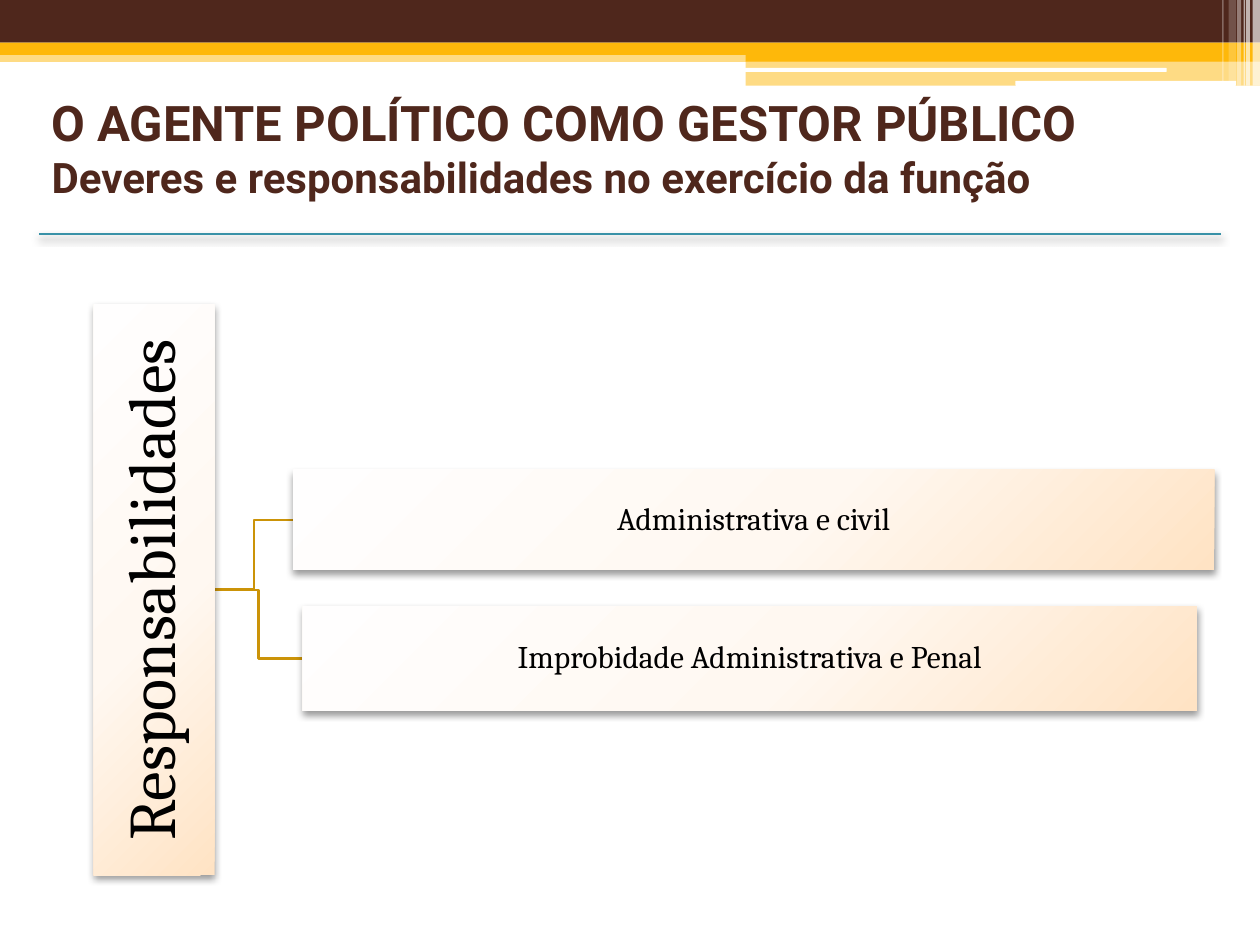
from pptx import Presentation
from pptx.dml.color import RGBColor
from pptx.enum.shapes import MSO_CONNECTOR, MSO_SHAPE
from pptx.enum.text import MSO_ANCHOR, PP_ALIGN
from pptx.oxml import parse_xml
from pptx.oxml.ns import nsdecls, qn
from pptx.util import Cm, Pt

BROWN = RGBColor(0x4F, 0x27, 0x1C)
AMBER = RGBColor(0xFE, 0xB8, 0x0A)
OCHRE = RGBColor(0xCB, 0x93, 0x08)
TEAL = RGBColor(0x38, 0x91, 0xA7)
WHITE = RGBColor(0xFF, 0xFF, 0xFF)
BLACK = RGBColor(0, 0, 0)
CREAM_STOPS = ((0, RGBColor(0xFF, 0xFE, 0xFE)),
               (55, RGBColor(0xFF, 0xF8, 0xF1)),
               (100, RGBColor(0xFF, 0xE3, 0xC4)))

# left, top, width, height in cm, colour, opacity in %
BANDS = (
    (0, 1.02, 25.4, 0.23, AMBER, 50),
    (0, 0, 25.4, 0.86, BROWN, 100),
    (0, 0.86, 25.4, 0.25, AMBER, 100),
    (15.03, 0.99, 10.37, 0.25, AMBER, 100),
    (15.03, 1.23, 10.37, 0.5, AMBER, 50),
)
GAPS = ((15.01, 1.37, 8.51, 0.08), (20.47, 1.63, 4.45, 0.1))
# left, width, height in cm, opacity in %
STRIPES = (
    (25.25, 0.15, 1.73, 65),
    (25.12, 0.08, 1.73, 65),
    (25.07, 0.03, 1.73, 60),
    (24.94, 0.08, 1.73, 40),
    (24.77, 0.15, 1.63, 20),
    (24.64, 0.03, 1.63, 30),
)
SPINE_CENTRE = (3.11, 11.89)
SPINE_LENGTH, SPINE_THICKNESS = 11.51, 2.44
BRANCHES = (
    ("Administrativa e civil", 5.91, 9.47, 18.57, 2.02),
    ("Improbidade Administrativa e Penal", 6.1, 12.22, 18.03, 2.11),
)


class SlidePainter:
    heading_font = "Roboto"
    body_font = "Cambria"

    def __init__(self, slide):
        self.slide = slide

    def block(self, left, top, width, height, color, opacity=100,
              kind=MSO_SHAPE.RECTANGLE):
        block = self.slide.shapes.add_shape(
            kind, Cm(left), Cm(top), Cm(width), Cm(height))
        block.fill.solid()
        block.fill.fore_color.rgb = color
        block.line.fill.background()
        block.shadow.inherit = False
        if opacity < 100:
            srgb = block.fill._xPr.find(".//" + qn("a:srgbClr"))
            srgb.append(parse_xml(
                f'<a:alpha {nsdecls("a")} val="{opacity * 1000}"/>'))
        return block

    def drop_shadow(self, element):
        element._element.spPr.append(parse_xml(
            f'<a:effectLst {nsdecls("a")}><a:outerShdw blurRad="{Pt(4.1)}" '
            f'dist="{Pt(2)}" dir="5400000" rotWithShape="0">'
            '<a:srgbClr val="000000"><a:alpha val="40000"/></a:srgbClr>'
            '</a:outerShdw></a:effectLst>'))

    def card(self, text, left, top, width, height, size, inset):
        """Shaded box with a soft shadow and centred text."""
        card = self.slide.shapes.add_shape(
            MSO_SHAPE.RECTANGLE, Cm(left), Cm(top), Cm(width), Cm(height))
        card.fill.background()
        card.line.fill.background()
        stops = "".join(
            f'<a:gs pos="{position * 1000}"><a:srgbClr val="{color}"/></a:gs>'
            for position, color in CREAM_STOPS)
        properties = card._element.spPr
        properties.replace(properties.find(qn("a:noFill")), parse_xml(
            f'<a:gradFill {nsdecls("a")} rotWithShape="1">'
            f'<a:gsLst>{stops}</a:gsLst><a:path path="circle">'
            '<a:fillToRect l="-40000" t="-90000" r="140000" b="190000"/>'
            '</a:path></a:gradFill>'))
        self.drop_shadow(card)

        frame = card.text_frame
        frame.word_wrap = True
        frame.vertical_anchor = MSO_ANCHOR.MIDDLE
        frame.margin_left = frame.margin_right = Cm(inset)
        frame.margin_top = frame.margin_bottom = Cm(inset)
        frame.text = text
        paragraph = frame.paragraphs[0]
        paragraph.alignment = PP_ALIGN.CENTER
        paragraph.line_spacing = 0.9
        self.style(paragraph.runs[0], size, self.body_font, BLACK)
        return card

    def style(self, run, size, font, color, bold=False):
        run.font.size = Pt(size)
        run.font.name = font
        run.font.color.rgb = color
        run.font.bold = bold

    def elbow(self, start_x, start_y, end_x, end_y):
        middle = (start_x + end_x) / 2
        builder = self.slide.shapes.build_freeform(Cm(start_x), Cm(start_y))
        corners = ((middle, start_y), (middle, end_y), (end_x, end_y))
        builder.add_line_segments(
            [(Cm(x), Cm(y)) for x, y in corners], close=False)
        elbow = builder.convert_to_shape()
        elbow.fill.background()
        elbow.line.color.rgb = OCHRE
        elbow.line.width = Pt(1.5)
        elbow.shadow.inherit = False

    def rule(self, left, right, y):
        rule = self.slide.shapes.add_connector(
            MSO_CONNECTOR.STRAIGHT, Cm(left), Cm(y), Cm(right), Cm(y))
        rule.line.color.rgb = TEAL
        rule.line.width = Pt(1.5)
        self.drop_shadow(rule)

    def heading(self, title, subtitle, left, top, width, height):
        box = self.slide.shapes.add_textbox(
            Cm(left), Cm(top), Cm(width), Cm(height))
        frame = box.text_frame
        frame.word_wrap = True
        frame.vertical_anchor = MSO_ANCHOR.MIDDLE
        paragraph = frame.paragraphs[0]
        paragraph.text = f"{title}\v{subtitle}"
        for run, size in zip(paragraph.runs, (28, 24)):
            self.style(run, size, self.heading_font, BROWN, bold=True)


def main():
    deck = Presentation()
    deck.slide_width, deck.slide_height = Cm(25.4), Cm(19.05)
    painter = SlidePainter(deck.slides.add_slide(deck.slide_layouts[6]))

    for band in BANDS:
        painter.block(*band)
    for gap in GAPS:
        painter.block(*gap, WHITE, kind=MSO_SHAPE.ROUNDED_RECTANGLE)
    for left, width, height, opacity in STRIPES:
        painter.block(left, 0, width, height, WHITE, opacity)

    centre_x, centre_y = SPINE_CENTRE
    for _, left, top, _, height in reversed(BRANCHES):
        painter.elbow(centre_x + SPINE_THICKNESS / 2, centre_y,
                      left, top + height / 2)
    spine = painter.card(
        "Responsabilidades", centre_x - SPINE_LENGTH / 2,
        centre_y - SPINE_THICKNESS / 2, SPINE_LENGTH, SPINE_THICKNESS,
        size=38, inset=0.08)
    spine.rotation = 270
    for branch in BRANCHES:
        painter.card(*branch, size=18, inset=0.03)

    painter.rule(0.79, 24.61, 4.72)
    painter.heading("O AGENTE POLÍTICO COMO GESTOR PÚBLICO",
                    "Deveres e responsabilidades no exercício da função",
                    0.79, 1.32, 24.61, 3.3)
    deck.save("out.pptx")


if __name__ == "__main__":
    main()
